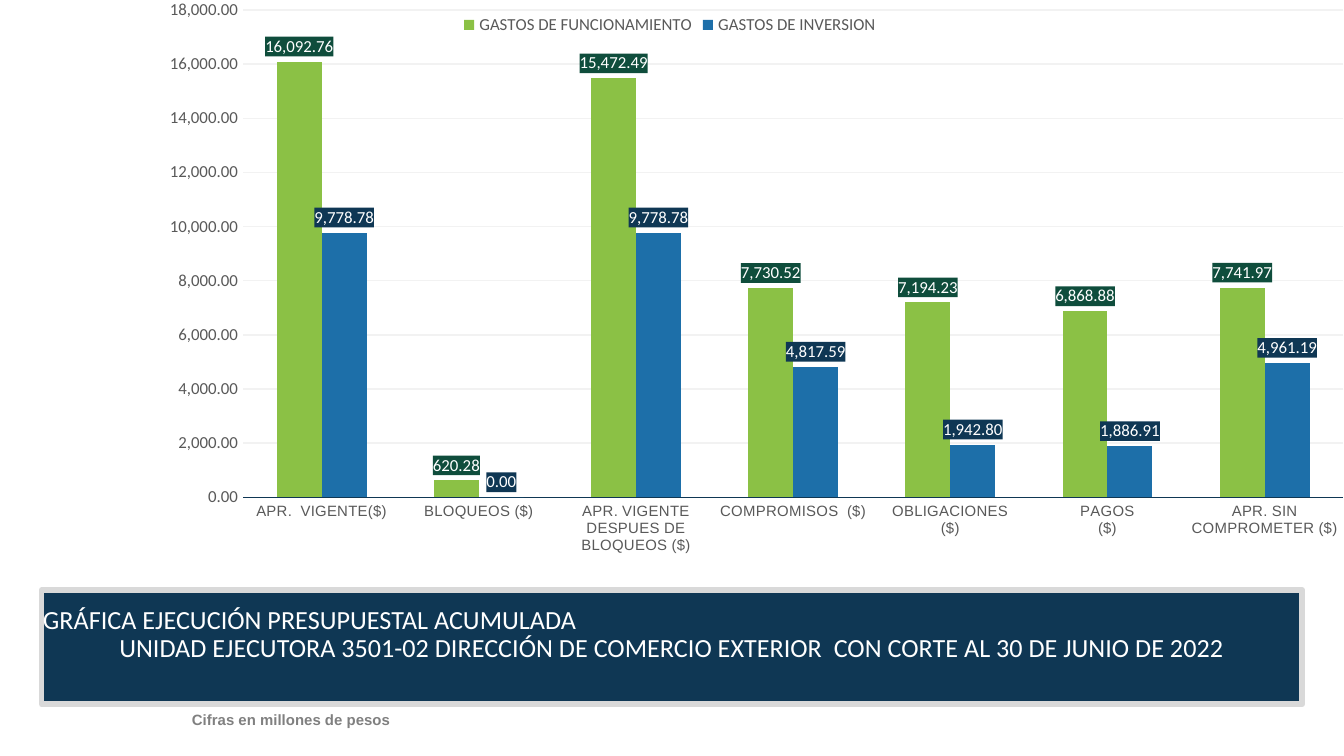
from lxml import etree
from pptx import Presentation
from pptx.chart.data import CategoryChartData
from pptx.dml.color import RGBColor
from pptx.enum.chart import XL_CHART_TYPE as ChartType
from pptx.enum.chart import XL_LABEL_POSITION as LabelPosition
from pptx.enum.chart import XL_LEGEND_POSITION as LegendPosition
from pptx.enum.chart import XL_TICK_MARK as TickMark
from pptx.enum.text import MSO_ANCHOR as Anchor
from pptx.enum.text import MSO_AUTO_SIZE as AutoSize
from pptx.enum.text import PP_ALIGN as Align
from pptx.oxml import parse_xml
from pptx.oxml.ns import nsdecls, qn
from pptx.util import Inches, Pt

SLIDE_WIDTH = 10
SLIDE_HEIGHT = SLIDE_WIDTH * 9 / 16
COLORS = {
    "navy": "0F3754",
    "blue": "1D6FA9",
    "green": "8BC145",
    "dark_green": "0F4D3C",
    "white": "FFFFFF",
    "frame": "D9D9D9",
    "grid": "F2F2F2",
    "axis_text": "595959",
    "note": "808080",
}
NUMBER_FORMAT = "#,##0.00"
CATEGORIES = [
    "APR.  VIGENTE($)",
    "BLOQUEOS ($)",
    "APR. VIGENTE DESPUES DE BLOQUEOS ($)",
    "COMPROMISOS  ($)",
    "OBLIGACIONES\n($)",
    "PAGOS\n($)",
    "APR. SIN COMPROMETER ($)",
]
EXPENSES = [
    ("GASTOS DE FUNCIONAMIENTO", "green", "dark_green",
     [16092.76, 620.28, 15472.49, 7730.52, 7194.23, 6868.88, 7741.97]),
    ("GASTOS DE INVERSION ", "blue", "navy",
     [9778.78, 0, 9778.78, 4817.59, 1942.80, 1886.91, 4961.19]),
]
HEADING = [
    ("GRÁFICA EJECUCIÓN PRESUPUESTAL ACUMULADA", Align.LEFT),
    ("UNIDAD EJECUTORA 3501-02 DIRECCIÓN DE COMERCIO EXTERIOR  "
     "CON CORTE AL 30 DE JUNIO DE 2022", Align.CENTER),
]


def rgb(name):
    return RGBColor.from_string(COLORS[name])


def style_font(font, name, size, color, bold=False):
    font.name = name
    font.size = Pt(size)
    font.bold = bold
    font.color.rgb = rgb(color)


def fix_plot_area(chart, x, y, w, h):
    plot_area = chart._chartSpace.chart.plotArea
    for old in plot_area.findall(qn("c:layout")):
        plot_area.remove(old)
    layout = parse_xml(f"<c:layout {nsdecls('c')}><c:manualLayout/></c:layout>")
    settings = [("layoutTarget", "inner"), ("xMode", "edge"), ("yMode", "edge"),
                ("x", x), ("y", y), ("w", w), ("h", h)]
    for tag, value in settings:
        etree.SubElement(layout[0], qn(f"c:{tag}")).set("val", str(value))
    plot_area.insert(0, layout)


def label_bars(series, background):
    labels = series.data_labels
    labels.show_value = True
    labels.number_format = NUMBER_FORMAT
    labels.number_format_is_linked = False
    labels.position = LabelPosition.OUTSIDE_END
    style_font(labels.font, "Calibri", 9, "white")
    box = parse_xml(
        f"<c:spPr {nsdecls('c', 'a')}><a:solidFill>"
        f'<a:srgbClr val="{COLORS[background]}"/></a:solidFill></c:spPr>')
    labels._element.find(qn("c:txPr")).addprevious(box)


def add_expense_chart(slide, left, top, width, height):
    data = CategoryChartData(number_format=NUMBER_FORMAT)
    data.categories = CATEGORIES
    for name, _, _, values in EXPENSES:
        data.add_series(name, values)
    chart = slide.shapes.add_chart(
        ChartType.COLUMN_CLUSTERED, Inches(left), Inches(top),
        Inches(width), Inches(height), data).chart
    chart.has_title = False
    chart.font.name = "Calibri"
    chart.font.size = Pt(10)

    plot = chart.plots[0]
    plot.gap_width = 150
    plot.overlap = 0
    plot.vary_by_categories = False
    for series, (_, color, label_color, _) in zip(plot.series, EXPENSES):
        series.format.fill.solid()
        series.format.fill.fore_color.rgb = rgb(color)
        series.invert_if_negative = False
        label_bars(series, label_color)

    stages = chart.category_axis
    stages.major_tick_mark = TickMark.NONE
    stages.format.line.color.rgb = rgb("navy")
    stages.format.line.width = Pt(0.75)
    style_font(stages.tick_labels.font, "Arial", 8, "axis_text")

    amounts = chart.value_axis
    amounts.minimum_scale, amounts.maximum_scale = 0, 18000
    amounts.major_unit = 2000
    amounts.major_tick_mark = TickMark.NONE
    amounts.format.line.fill.background()
    amounts.major_gridlines.format.line.color.rgb = rgb("grid")
    amounts.major_gridlines.format.line.width = Pt(0.75)
    amounts.tick_labels.number_format = NUMBER_FORMAT
    amounts.tick_labels.number_format_is_linked = False
    style_font(amounts.tick_labels.font, "Calibri", 9, "axis_text")

    chart.has_legend = True
    chart.legend.position = LegendPosition.TOP
    chart.legend.include_in_layout = False
    style_font(chart.legend.font, "Calibri", 9, "axis_text")
    fix_plot_area(chart, 0.181, 0.017, 0.819, 0.826)


def format_heading(slide, left, top, width, height):
    heading = slide.shapes.title
    heading.left, heading.top = Inches(left), Inches(top)
    heading.width, heading.height = Inches(width), Inches(height)
    heading.fill.solid()
    heading.fill.fore_color.rgb = rgb("navy")
    heading.line.color.rgb = rgb("frame")
    heading.line.width = Pt(3)
    frame = heading.text_frame
    frame.word_wrap = True
    frame.auto_size = AutoSize.NONE
    frame.vertical_anchor = Anchor.MIDDLE
    frame.margin_left = frame.margin_right = Inches(0.01)
    frame.margin_top = 0
    frame.margin_bottom = Inches(0.18)
    for index, (wording, alignment) in enumerate(HEADING):
        line = frame.add_paragraph() if index else frame.paragraphs[0]
        line.alignment = alignment
        line.line_spacing = 0.9
        line.space_before = Pt(0)
        run = line.add_run()
        run.text = wording
        style_font(run.font, "Calibri", 14, "white")


def add_units_note(slide, left, top, width, height):
    frame = slide.shapes.add_textbox(
        Inches(left), Inches(top), Inches(width), Inches(height)).text_frame
    frame.word_wrap = True
    frame.auto_size = AutoSize.SHAPE_TO_FIT_TEXT
    line = frame.paragraphs[0]
    line.line_spacing = 0.9
    run = line.add_run()
    run.text = "Cifras en millones de pesos"
    style_font(run.font, "Arial", 8, "note", bold=True)


def main():
    deck = Presentation()
    deck.slide_width, deck.slide_height = Inches(SLIDE_WIDTH), Inches(SLIDE_HEIGHT)
    slide = deck.slides.add_slide(deck.slide_layouts[5])
    format_heading(slide, 0.31, 4.39, 9.38, 0.85)
    add_units_note(slide, 1.33, 5.25, 2, 0.22)
    add_expense_chart(slide, 0, 0, SLIDE_WIDTH, 4.39)
    deck.save("out.pptx")


if __name__ == "__main__":
    main()
